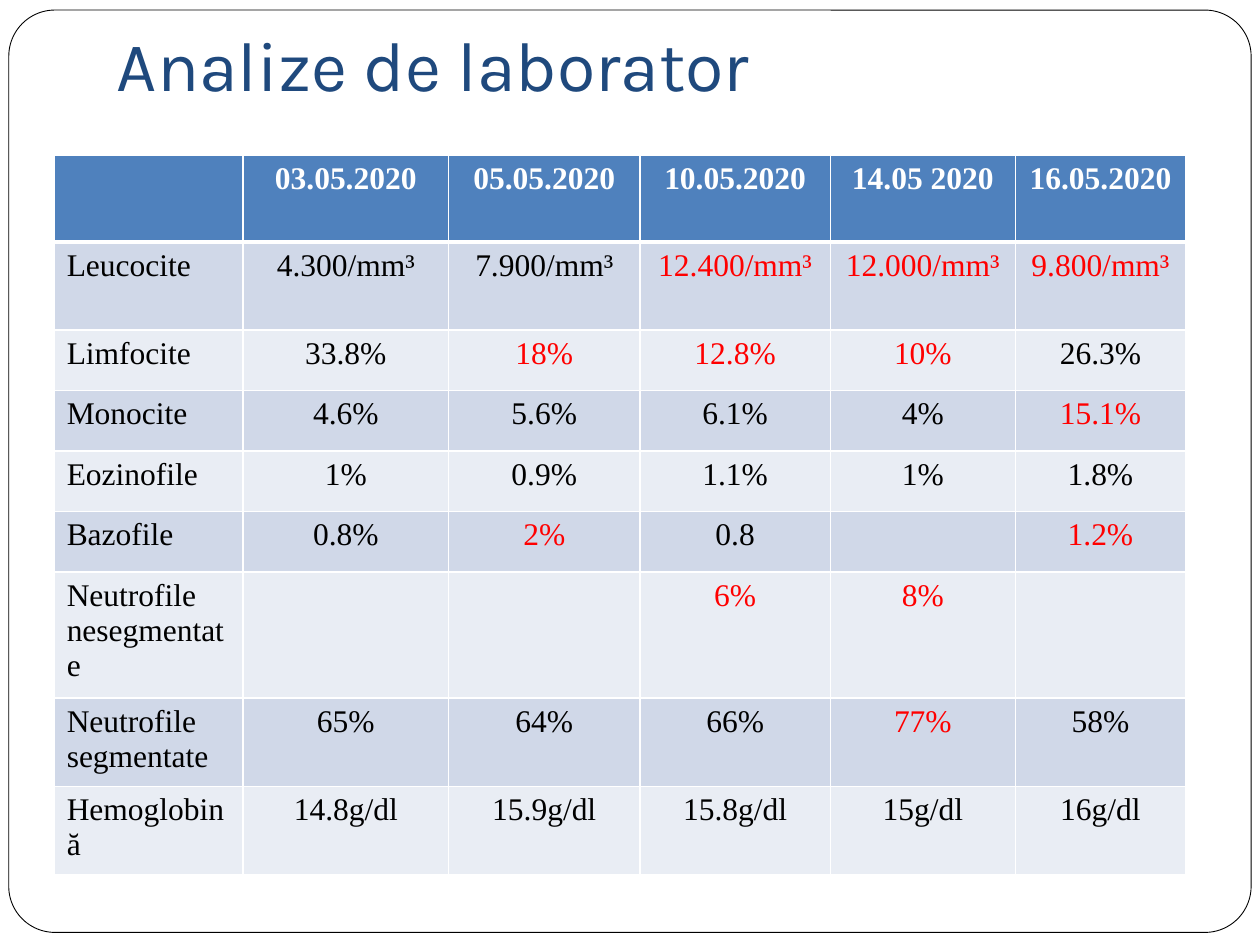
from lxml.etree import SubElement
from pptx import Presentation
from pptx.dml.color import RGBColor
from pptx.enum.shapes import MSO_SHAPE
from pptx.enum.text import MSO_ANCHOR, PP_ALIGN
from pptx.oxml.ns import qn
from pptx.util import Inches, Pt

COLORS = {
    "white": "FFFFFF",
    "black": "000000",
    "title": "1F497D",
    "header": "4F81BD",
    "odd row": "D0D8E8",
    "even row": "E9EDF4",
    "abnormal": "FF0000",
}
COLUMN_WIDTHS = [1.5, 1.63, 1.52, 1.51, 1.47, 1.35]
ROW_HEIGHTS = [0.69, 0.7, 0.48, 0.48, 0.48, 0.48, 0.99, 0.69, 0.69]

# A trailing * marks a value shown as abnormal.
RESULTS = [
    ["", "03.05.2020", "05.05.2020", "10.05.2020", "14.05 2020", "16.05.2020"],
    ["Leucocite", "4.300/mm³", "7.900/mm³", "12.400/mm³*", "12.000/mm³*", "9.800/mm³*"],
    ["Limfocite", "33.8%", "18%*", "12.8%*", "10%*", "26.3%"],
    ["Monocite", "4.6%", "5.6%", "6.1%", "4%", "15.1%*"],
    ["Eozinofile", "1%", "0.9%", "1.1%", "1%", "1.8%"],
    ["Bazofile", "0.8%", "2%*", "0.8", "", "1.2%*"],
    ["Neutrofile\nnesegmentate", "", "", "6%*", "8%*", ""],
    ["Neutrofile segmentate", "65%", "64%", "66%", "77%*", "58%"],
    ["Hemoglobină", "14.8g/dl", "15.9g/dl", "15.8g/dl", "15g/dl", "16g/dl"],
]


def color(name):
    return RGBColor.from_string(COLORS[name])


def add_borders(cell, row_index):
    """Draw white cell borders, thicker between the header and the body."""
    widths = {
        "a:lnL": 1,
        "a:lnR": 1,
        "a:lnT": 3 if row_index == 1 else 1,
        "a:lnB": 3 if row_index == 0 else 1,
    }
    properties = cell._tc.get_or_add_tcPr()
    for tag, width in widths.items():
        line = SubElement(properties, qn(tag), w=str(Pt(width)))
        fill = SubElement(line, qn("a:solidFill"))
        SubElement(fill, qn("a:srgbClr"), val=COLORS["white"])


presentation = Presentation()
presentation.slide_width = Inches(10)
presentation.slide_height = Inches(7.5)
slide = presentation.slides.add_slide(presentation.slide_layouts[6])

# Rounded frame
frame = slide.shapes.add_shape(
    MSO_SHAPE.ROUNDED_RECTANGLE, Inches(0.07), Inches(0.08), Inches(9.86), Inches(7.32)
)
frame.adjustments[0] = 0.05
frame.shadow.inherit = False
frame.fill.solid()
frame.fill.fore_color.rgb = color("white")
frame.line.color.rgb = color("black")
frame.line.width = Pt(0.5)

# Title
title = slide.shapes.add_textbox(Inches(0.83), Inches(0), Inches(8.5), Inches(0.94))
title_frame = title.text_frame
title_frame.word_wrap = True
title_frame.vertical_anchor = MSO_ANCHOR.BOTTOM
title_frame.margin_bottom = Inches(0.1)
title_frame.text = "Analize de laborator"
title_font = title_frame.paragraphs[0].runs[0].font
title_font.name = "Karla"
title_font.size = Pt(40)
title_font.color.rgb = color("title")

# Laboratory results
table = slide.shapes.add_table(
    len(ROW_HEIGHTS), len(COLUMN_WIDTHS),
    Inches(0.43), Inches(1.23), Inches(sum(COLUMN_WIDTHS)), Inches(sum(ROW_HEIGHTS)),
).table
for column, width in zip(table.columns, COLUMN_WIDTHS):
    column.width = Inches(width)
for row, height in zip(table.rows, ROW_HEIGHTS):
    row.height = Inches(height)

for row_index, values in enumerate(RESULTS):
    is_header = row_index == 0
    row_fill = "header" if is_header else "odd row" if row_index % 2 else "even row"
    for column_index, value in enumerate(values):
        cell = table.cell(row_index, column_index)
        add_borders(cell, row_index)
        cell.fill.solid()
        cell.fill.fore_color.rgb = color(row_fill)
        cell.text_frame.text = value.rstrip("*")
        text_color = "white" if is_header else "abnormal" if value.endswith("*") else "black"
        for paragraph in cell.text_frame.paragraphs:
            paragraph.alignment = PP_ALIGN.CENTER if column_index else PP_ALIGN.LEFT
            for run in paragraph.runs:
                run.font.name = "Times New Roman"
                run.font.size = Pt(18)
                run.font.bold = is_header
                run.font.color.rgb = color(text_color)

presentation.save("out.pptx")
